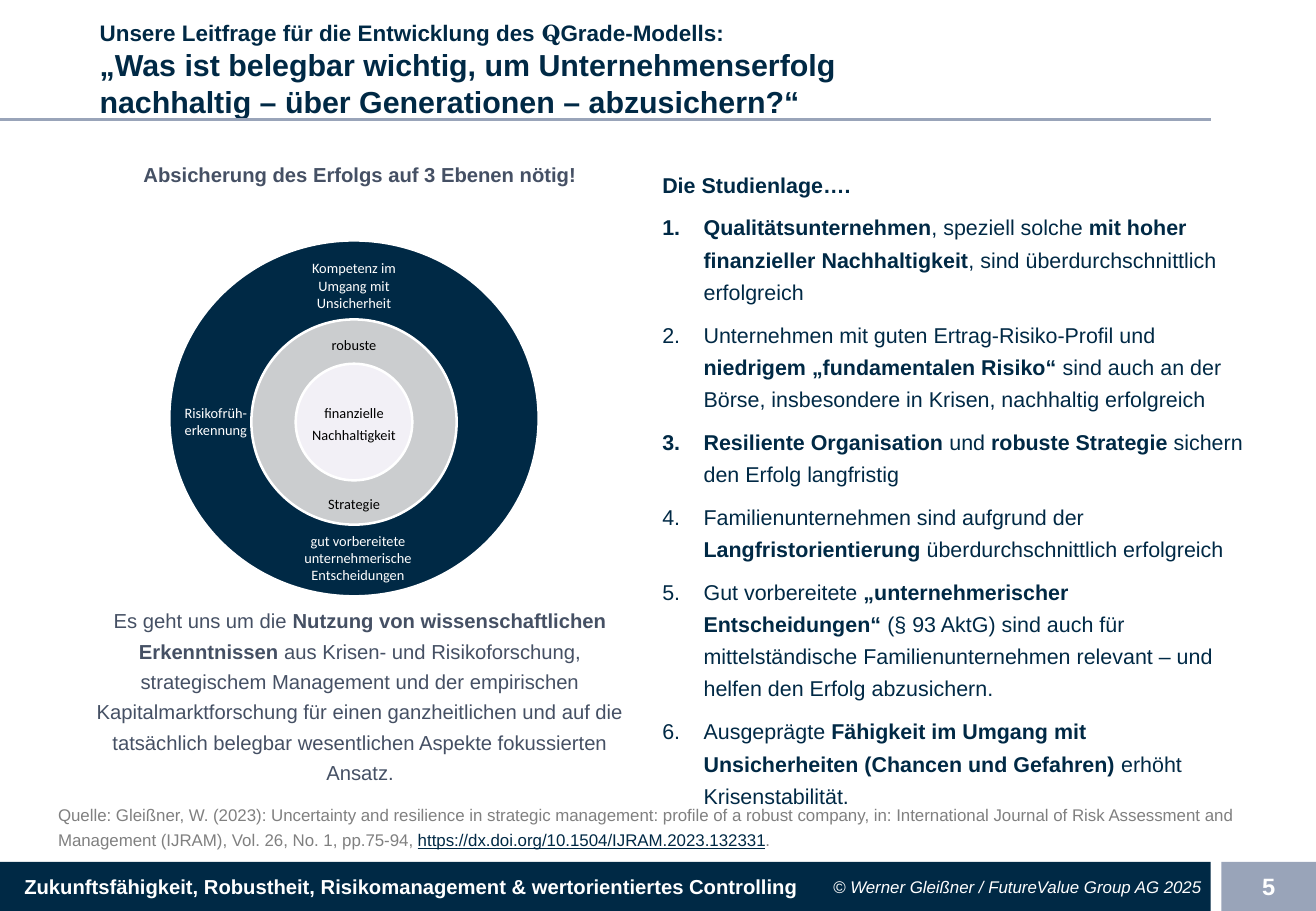
from lxml.etree import SubElement as Sub
from pptx import Presentation
from pptx.dml.color import RGBColor as Rgb
from pptx.enum.shapes import MSO_CONNECTOR as Link, MSO_SHAPE as Shape
from pptx.enum.text import MSO_ANCHOR as Anchor, MSO_AUTO_SIZE as Auto, PP_ALIGN as Align
from pptx.oxml.ns import qn
from pptx.util import Inches, Pt

HEX = {"navy": "002945", "steel": "99A4B9", "slate": "455064", "grey": "808080",
       "ring": "CBCDCF", "core": "F2F0F6", "white": "FFFFFF", "black": "000000"}
RGB = {name: Rgb.from_string(code) for name, code in HEX.items()}

deck = Presentation()
deck.slide_width, deck.slide_height = Inches(10.83), Inches(7.5)
COL, ROW = deck.slide_width / 100, deck.slide_height / 100
slide = deck.slides.add_slide(deck.slide_layouts[5])
shapes = slide.shapes


def area(x, y, w, h):
    """Turn columns and rows of the 100 x 100 grid into lengths."""
    return int(x * COL), int(y * ROW), int(w * COL), int(h * ROW)


def write(box, runs, size, color, align=Align.LEFT, anchor=Anchor.TOP,
          font="Arial", pad=(0.08, 0.04), wrap=True):
    """Fill the first paragraph with (text, bold) runs and return it."""
    frame = box.text_frame
    frame.auto_size, frame.word_wrap = Auto.NONE, wrap
    frame.vertical_anchor = anchor
    frame.margin_left = frame.margin_right = Inches(pad[0])
    frame.margin_top = frame.margin_bottom = Inches(pad[1])
    par = frame.paragraphs[0]
    par.alignment = align
    for text, bold in runs:
        run = par.add_run()
        run.text = text
        run.font.name, run.font.size, run.font.bold = font, Pt(size), bold
        run.font.color.rgb = RGB[color]
    return par


# Title
title = shapes.title
title.left, title.top, title.width, title.height = area(6.83, 4.27, 69.44, 6.67)
par = write(title, [("Unsere Leitfrage für die Entwicklung des ", True), ("Q", True),
                    ("Grade-Modells:", True)], 13.3, "navy", anchor=Anchor.MIDDLE)
par.runs[1].font.name = "TeX Gyre Schola"
for line in ("„Was ist belegbar wichtig, um Unternehmenserfolg",
             "nachhaltig – über Generationen – abzusichern?“"):
    par.add_line_break()
    write(title, [(line, True)], 18, "navy", anchor=Anchor.MIDDLE)

rule = shapes.add_connector(Link.STRAIGHT, 0, int(13.1 * ROW), int(92 * COL), int(13.1 * ROW))
rule.line.color.rgb, rule.line.width = RGB["steel"], Pt(1.5)
Sub(rule._element.spPr, qn("a:effectLst"))

# Footer
for x, w, fill, text, size, align, pad in (
        (0, 92, "navy", "Zukunftsfähigkeit, Robustheit, Risikomanagement & "
         "wertorientiertes Controlling", 12, Align.LEFT, 0.2),
        (92.8, 7.2, "steel", "5", 14, Align.CENTER, 0.08)):
    bar = shapes.add_shape(Shape.RECTANGLE, *area(x, 94.6, w, 5.4))
    bar.shadow.inherit = False
    bar.fill.solid()
    bar.fill.fore_color.rgb = RGB[fill]
    bar.line.fill.background()
    write(bar, [(text, True)], size, "white", align, Anchor.MIDDLE, pad=(pad, 0.04))
right = shapes.add_textbox(*area(52, 94.6, 40, 5.4))
par = write(right, [("© Werner Gleißner / FutureValue Group AG 2025", False)],
            10, "white", Align.RIGHT, Anchor.MIDDLE)
par.runs[0].font.italic = True

# Left column
head = shapes.add_textbox(*area(5.26, 17.33, 44.2, 4))
write(head, [("Absicherung des Erfolgs auf 3 Ebenen nötig!", True)], 12, "slate", Align.CENTER)

MID = 26.9
for y, w, h, fill in ((45.93, 28.07, 39.07, "navy"), (46.33, 15.6, 22.53, "ring"),
                      (46.33, 8.86, 12.8, "core")):
    ring = shapes.add_shape(Shape.OVAL, *area(MID - w / 2, y - h / 2, w, h))
    ring.shadow.inherit = False
    ring.fill.solid()
    ring.fill.fore_color.rgb = RGB[fill]
    ring.line.color.rgb, ring.line.width = RGB["white"], Pt(1.5)

for x, y, w, color, space, text in (
        (MID, 37.6, 5.08, "black", 1.25, "robuste"),
        (MID, 31.33, 7.02, "white", 1, "Kompetenz im Umgang mit Unsicherheit"),
        (MID, 46.27, 7.02, "black", 1.25, "finanzielle Nachhaltigkeit"),
        (27.2, 61.2, 9.6, "white", 1, "gut vorbereitete unternehmerische Entscheidungen"),
        (16.4, 46.27, 5.08, "white", 1, "Risikofrüh-erkennung"),
        (MID, 55.07, 5.08, "black", 1.25, "Strategie")):
    label = shapes.add_textbox(*area(x - w / 2, y - 2.53, w, 5.07))
    par = write(label, [(text, False)], 8.5, color, Align.CENTER, Anchor.MIDDLE,
                "Calibri", (0, 0))
    par.line_spacing = space

aim = shapes.add_textbox(*area(5.26, 65.6, 44.2, 20))
par = write(aim, [
    ("Es geht uns um die ", False),
    ("Nutzung von wissenschaftlichen Erkenntnissen ", True),
    ("aus Krisen- und Risikoforschung, strategischem Management und der empirischen "
     "Kapitalmarktforschung für einen ganzheitlichen und auf die tatsächlich belegbar "
     "wesentlichen Aspekte fokussierten Ansatz.", False)], 12, "slate", Align.CENTER)
par.line_spacing = 1.25

# Right column: bold parts stand between asterisks
points = (
    "*Qualitätsunternehmen*, speziell solche *mit hoher finanzieller Nachhaltigkeit*, "
    "sind überdurchschnittlich erfolgreich",
    "Unternehmen mit guten Ertrag-Risiko-Profil und *niedrigem „fundamentalen Risiko“ *"
    "sind auch an der Börse, insbesondere in Krisen, nachhaltig erfolgreich",
    "*Resiliente Organisation *und *robuste Strategie *sichern den Erfolg langfristig",
    "Familienunternehmen sind aufgrund der *Langfristorientierung* "
    "überdurchschnittlich erfolgreich",
    "Gut vorbereitete *„unternehmerischer Entscheidungen“ *(§ 93 AktG) sind auch für "
    "mittelständische Familienunternehmen relevant – und helfen den Erfolg abzusichern.",
    "Ausgeprägte *Fähigkeit im Umgang mit Unsicherheiten (Chancen und Gefahren) *"
    "erhöht Krisenstabilität.")
study = shapes.add_textbox(*area(49.68, 17.73, 45.6, 65))
par = write(study, [("Die Studienlage….", True)], 12.7, "navy", pad=(0.07, 0.03))
par.line_spacing, par.space_after = 1.25, Pt(3.2)
for point in points:
    par = study.text_frame.add_paragraph()
    par.line_spacing = 1.25
    par.space_before = par.space_after = Pt(3.2)
    props = par._p.get_or_add_pPr()
    props.set("marL", str(Inches(0.34)))
    props.set("indent", str(-Inches(0.34)))
    Sub(props, qn("a:buFont"), typeface="+mj-lt")
    Sub(props, qn("a:buAutoNum"), type="arabicPeriod")
    for spot, text in enumerate(point.split("*")):
        if text:
            run = par.add_run()
            run.text = text
            run.font.name, run.font.size = "Arial", Pt(12.7)
            run.font.bold = spot % 2 == 1
            run.font.color.rgb = RGB["navy"]

# Source
cite = shapes.add_textbox(*area(3.5, 87.1, 95.3, 7))
par = write(cite, [
    ("Quelle: Gleißner, W. (2023): Uncertainty and resilience in strategic management: "
     "profile of a robust company, in: International Journal of Risk Assessment and "
     "Management (IJRAM), Vol. 26, No. 1, pp.75-94, ", False),
    ("https://dx.doi.org/10.1504/IJRAM.2023.132331", False), (".", False)],
    10, "grey", pad=(0.1, 0.05))
par.line_spacing = 1.25
par.runs[1].font.underline = True
par.runs[1].font.color.rgb = RGB["navy"]

deck.save("out.pptx")
